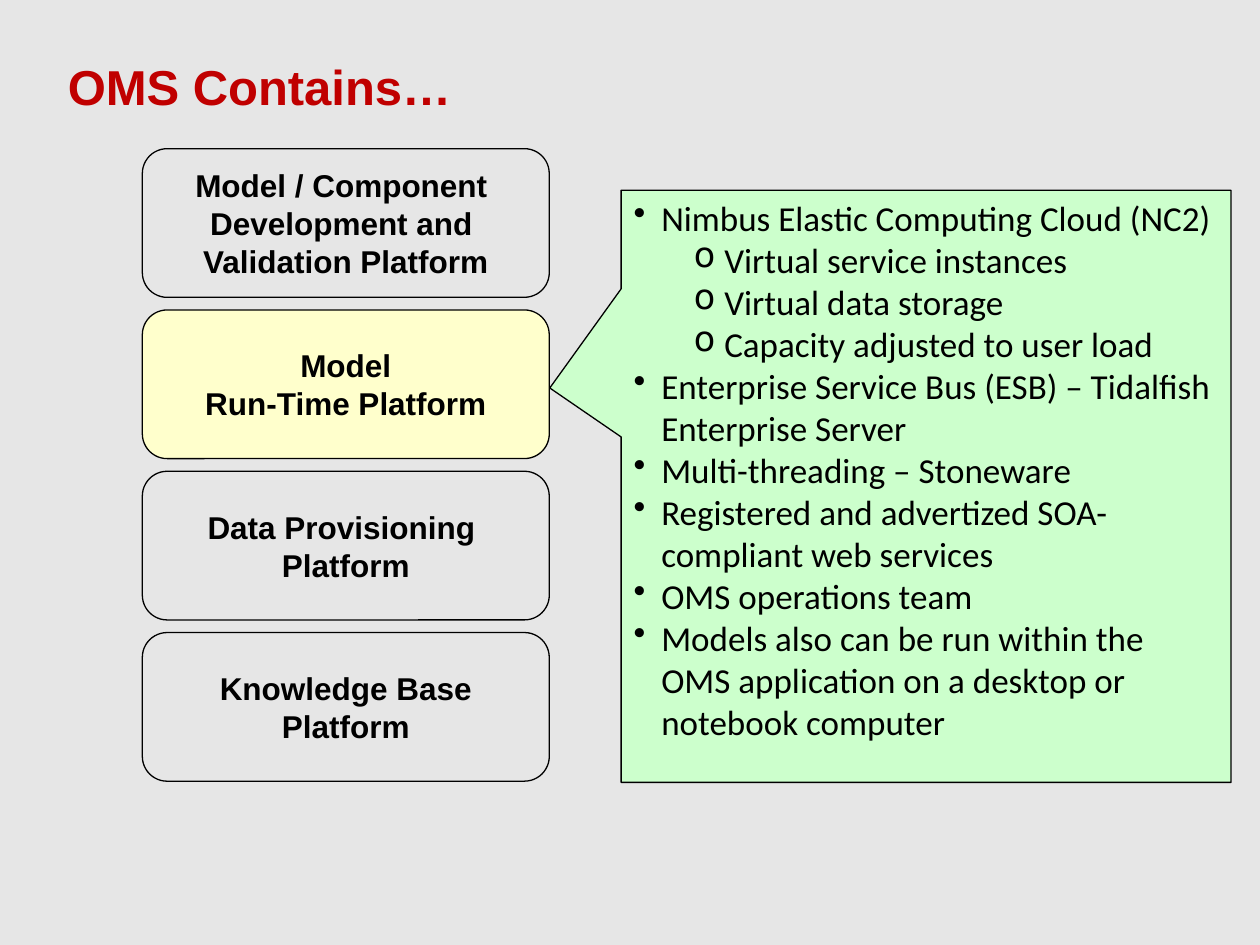
from dataclasses import dataclass

from lxml.etree import SubElement
from pptx import Presentation
from pptx.dml.color import RGBColor
from pptx.enum.shapes import MSO_SHAPE as SHAPE
from pptx.enum.text import MSO_ANCHOR as ANCHOR, MSO_AUTO_SIZE as AUTO, PP_ALIGN as ALIGN
from pptx.oxml.ns import qn
from pptx.util import Inches, Pt

TITLE = "OMS Contains…"
PLATFORMS = [
    ["Model / Component ", "Development and ", "Validation Platform"],
    ["Model", "Run-Time Platform"],
    ["Data Provisioning ", "Platform"],
    ["Knowledge Base", "Platform"],
]
ACTIVE = 1
DETAILS = [  # (level, text)
    (0, "Nimbus Elastic Computing Cloud (NC2)"),
    (1, "Virtual service instances"),
    (1, "Virtual data storage"),
    (1, "Capacity adjusted to user load"),
    (0, "Enterprise Service Bus (ESB) – Tidalfish Enterprise Server"),
    (0, "Multi-threading – Stoneware"),
    (0, "Registered and advertized SOA-compliant web services"),
    (0, "OMS operations team"),
    (0, "Models also can be run within the OMS application on a desktop or notebook computer"),
]
BULLETS = [("•", 0.22), ("o", 0.72)]  # character and left margin by level
HANGING = -0.24

# Platform column: left, top, width, height of one box, and step between boxes
LEFT, TOP, WIDTH, HEIGHT, STEP = 1.13, 1.18, 3.23, 1.18, 1.28
CALLOUT = (4.93, 1.51, 4.84, 4.7)


@dataclass(frozen=True)
class Theme:
    page: str = "E6E6E6"
    active: str = "FFFFCC"
    callout: str = "CCFFCC"
    ink: str = "000000"
    title: str = "C00000"
    heading_font: str = "Arial"
    body_font: str = "Calibri"
    title_size: int = 28
    box_size: int = 18
    body_size: int = 20
    line: float = 0.75


T = Theme()


def rgb(code):
    return RGBColor.from_string(code)


def add_run(p, text, font, size, color, bold=False):
    r = p.add_run()
    r.text = text
    r.font.name, r.font.size, r.font.bold = font, Pt(size), bold
    r.font.color.rgb = rgb(color)


def add_box(slide, kind, place, fill, adjustments):
    sp = slide.shapes.add_shape(kind, *map(Inches, place))
    sp.shadow.inherit = False
    sp.fill.solid()
    sp.fill.fore_color.rgb = rgb(fill)
    sp.line.color.rgb = rgb(T.ink)
    sp.line.width = Pt(T.line)
    for i, value in enumerate(adjustments):
        sp.adjustments[i] = value
    return sp.text_frame


def paragraphs(tf, items):
    """Yield each item with its own paragraph, using the first empty one."""
    for i, item in enumerate(items):
        yield (tf.add_paragraph() if i else tf.paragraphs[0]), item


def add_bullet(p, level):
    char, margin = BULLETS[level]
    p.level = level
    pPr = p._p.get_or_add_pPr()
    pPr.set("marL", str(Inches(margin)))
    pPr.set("indent", str(Inches(HANGING)))
    SubElement(pPr, qn("a:buChar")).set("char", char)


def main():
    prs = Presentation()
    prs.slide_width, prs.slide_height = Inches(10), Inches(7.5)
    slide = prs.slides.add_slide(prs.slide_layouts[6])
    slide.background.fill.solid()
    slide.background.fill.fore_color.rgb = rgb(T.page)

    tf = slide.shapes.add_textbox(*map(Inches, (0.44, 0.4, 4.03, 0.57))).text_frame
    tf.word_wrap = True
    tf.auto_size = AUTO.SHAPE_TO_FIT_TEXT
    add_run(tf.paragraphs[0], TITLE, T.heading_font, T.title_size, T.title, True)

    for row, lines in enumerate(PLATFORMS):
        place = (LEFT, TOP + row * STEP, WIDTH, HEIGHT)
        fill = T.active if row == ACTIVE else T.page
        tf = add_box(slide, SHAPE.ROUNDED_RECTANGLE, place, fill, [0.167])
        tf.word_wrap = False
        tf.vertical_anchor = ANCHOR.MIDDLE
        for p, line in paragraphs(tf, lines):
            p.alignment = ALIGN.CENTER
            add_run(p, line, T.heading_font, T.box_size, T.ink, True)

    tf = add_box(slide, SHAPE.RECTANGULAR_CALLOUT, CALLOUT, T.callout, [-0.617, -0.166])
    tf.word_wrap = True
    tf.vertical_anchor = ANCHOR.TOP
    for p, (level, text) in paragraphs(tf, DETAILS):
        p.alignment = ALIGN.LEFT
        add_bullet(p, level)
        add_run(p, text, T.body_font, T.body_size, T.ink)

    prs.save("out.pptx")


if __name__ == "__main__":
    main()
